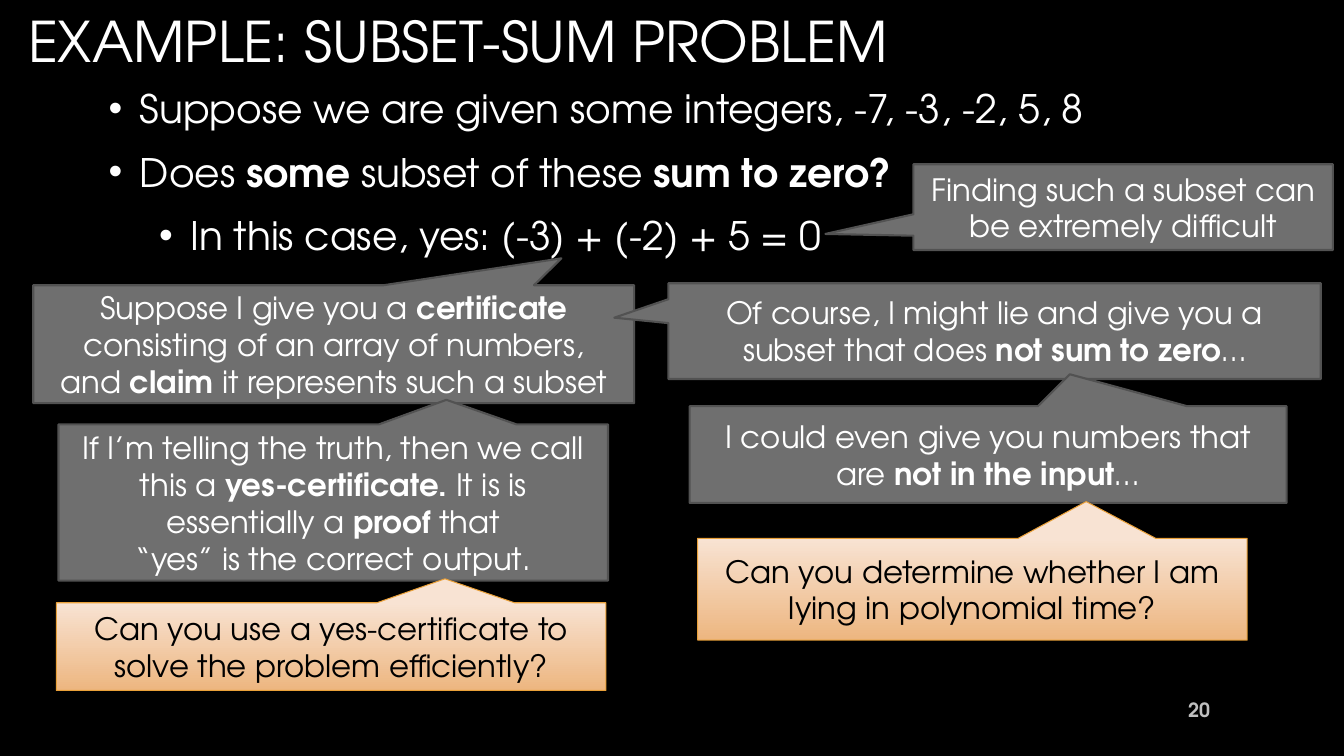
import pptx
import pptx.util
import pptx.dml.color
import pptx.enum.shapes
import pptx.enum.text
from lxml import etree

Inches, Pt = pptx.util.Inches, pptx.util.Pt
ALIGN, ANCHOR = pptx.enum.text.PP_ALIGN, pptx.enum.text.MSO_ANCHOR

# Content: **bold** marks emphasis, \n a line break; boxes are left, top, width, height.
TITLE = ("EXAMPLE: SUBSET-SUM PROBLEM", (0.18, 0, 13.04, 0.79))
BULLETS_BOX = (0.98, 0.79, 10.83, 2.3)
BULLETS = [
    (0, "Suppose we are given some integers, -7, -3, -2, 5, 8"),
    (0, "Does **some** subset of these **sum to zero?**"),
    (1, "In this case, yes: (-3) + (-2) + 5 = 0"),
]
# style, box, pointer tip as a share of the box measured from its centre, text
CALLOUTS = [
    ("statement", (0.33, 2.83, 5.96, 1.17), (0.379, -0.728),
     "Suppose I give you a **certificate** consisting of an array of numbers,\n"
     "and **claim** it represents such a subset"),
    ("statement", (6.63, 2.81, 6.47, 0.95), (-0.583, -0.14),
     "Of course, I might lie and give you a subset that does **not sum to zero**…"),
    ("statement", (0.58, 4.21, 5.45, 1.55), (0.206, -0.657),
     "If I’m telling the truth, then we call this a **yes-certificate. **"
     "It is is essentially a **proof **that\n“yes” is the correct output."),
    ("statement", (6.84, 4.03, 5.92, 0.96), (0.137, -0.83),
     "I could even give you numbers that are **not in the input**…"),
    ("statement", (9.06, 1.63, 4.16, 0.85), (-0.71, 0.313),
     "Finding such a subset can be extremely difficult"),
    ("question", (0.56, 5.98, 5.45, 0.87), (0.207, -0.773),
     "Can you use a yes-certificate to solve the problem efficiently?"),
    ("question", (6.92, 5.34, 5.45, 1.01), (0.207, -0.861),
     "Can you determine whether I am lying in polynomial time?"),
]
PAGE_NUMBER = ("**20**", (11.5, 6.84, 0.6, 0.4))

# A colour is one RRGGBB, or (start, end, clockwise angle) for a gradient.
THEME = {
    "font": "TeX Gyre Adventor",
    "background": "000000",
    "title": (40, ("FFFFFF", "A6A6A6", 93)),
    "bullets": (28, ("FFFFFF", "BFBFBF", 93)),
    "bullet_mark": "FFFFFF",
    "page_number": (14, "BFBFBF"),
    "statement": {"text": (22, "FFFFFF"), "fill": "6F6F6F", "line": ("525252", 1.5)},
    "question": {"text": (22, "000000"), "fill": ("F8E3D3", "EDB680", 90),
                 "line": ("E9A039", 0.75)},
}


def paint(fill, color):
    if isinstance(color, str):
        fill.solid()
        fill.fore_color.rgb = pptx.dml.color.RGBColor.from_string(color)
        return
    start, end, angle = color
    fill.gradient()
    fill.gradient_angle = 360 - angle  # python-pptx counts counter-clockwise
    for stop, position, shade in zip(fill.gradient_stops, (0, 1), (start, end)):
        stop.position = position
        stop.color.rgb = pptx.dml.color.RGBColor.from_string(shade)


def write(paragraph, text, style):
    """Fill a paragraph with runs, turning ** into bold and \\n into a line break."""
    size, color = style
    for index, part in enumerate(text.split("**")):
        for line_index, line in enumerate(part.split("\n")):
            if line_index:
                paragraph.add_line_break()
            if not line:
                continue
            run = paragraph.add_run()
            run.text = line
            run.font.name = THEME["font"]
            run.font.size = Pt(size)
            run.font.bold = index % 2 == 1
            paint(run.font.fill, color)


def add_text(slide, box, anchor):
    frame = slide.shapes.add_textbox(*map(Inches, box)).text_frame
    frame.word_wrap = True
    frame.vertical_anchor = anchor
    return frame


def add_bullet_mark(paragraph, level):
    properties = paragraph._p.get_or_add_pPr()
    properties.set("marL", str(Inches(0.31 + 0.5 * level)))
    properties.set("indent", str(Inches(-0.31)))
    namespace = "{http://schemas.openxmlformats.org/drawingml/2006/main}"
    mark_color = etree.SubElement(properties, namespace + "buClr")
    etree.SubElement(mark_color, namespace + "srgbClr", val=THEME["bullet_mark"])
    etree.SubElement(properties, namespace + "buFont", typeface="Arial")
    etree.SubElement(properties, namespace + "buChar", char="•")


def add_bullets(slide):
    frame = add_text(slide, BULLETS_BOX, ANCHOR.TOP)
    for index, (level, text) in enumerate(BULLETS):
        paragraph = frame.add_paragraph() if index else frame.paragraphs[0]
        paragraph.level = level
        paragraph.space_before = Pt(0.2 * THEME["bullets"][0])
        paragraph.space_after = Pt(6)
        add_bullet_mark(paragraph, level)
        write(paragraph, text, THEME["bullets"])


def add_callout(slide, kind, box, tip, text):
    style = THEME[kind]
    callout = slide.shapes.add_shape(
        pptx.enum.shapes.MSO_SHAPE.RECTANGULAR_CALLOUT, *map(Inches, box))
    callout.adjustments[0], callout.adjustments[1] = tip
    callout.shadow.inherit = False
    paint(callout.fill, style["fill"])
    line_color, line_width = style["line"]
    paint(callout.line.fill, line_color)
    callout.line.width = Pt(line_width)
    frame = callout.text_frame
    frame.word_wrap = True
    frame.vertical_anchor = ANCHOR.MIDDLE
    frame.paragraphs[0].alignment = ALIGN.CENTER
    write(frame.paragraphs[0], text, style["text"])


def main():
    deck = pptx.Presentation()
    deck.slide_width, deck.slide_height = Inches(13.33), Inches(7.5)
    slide = deck.slides.add_slide(deck.slide_layouts[6])
    paint(slide.background.fill, THEME["background"])

    title, title_box = TITLE
    write(add_text(slide, title_box, ANCHOR.MIDDLE).paragraphs[0], title, THEME["title"])
    add_bullets(slide)
    for callout in CALLOUTS:
        add_callout(slide, *callout)

    number, number_box = PAGE_NUMBER
    paragraph = add_text(slide, number_box, ANCHOR.MIDDLE).paragraphs[0]
    paragraph.alignment = ALIGN.RIGHT
    write(paragraph, number, THEME["page_number"])

    deck.save("out.pptx")


if __name__ == "__main__":
    main()
